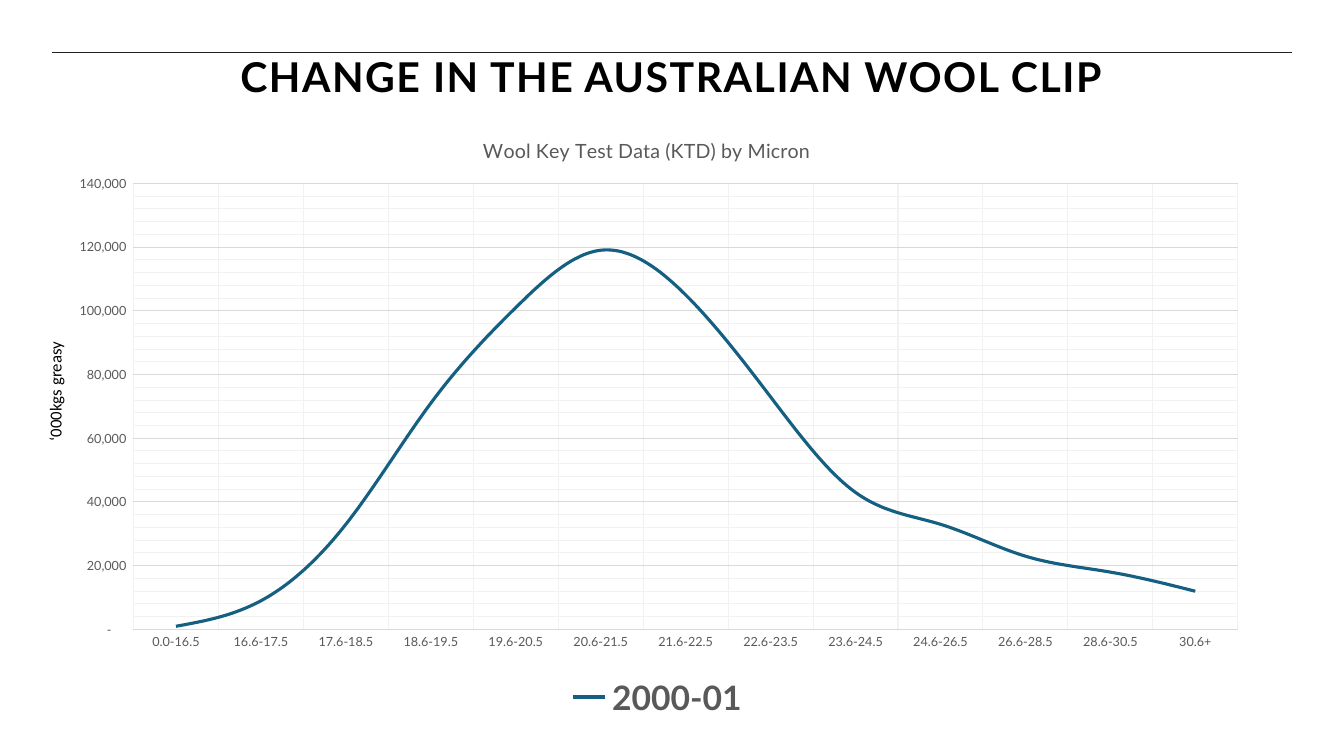
from lxml.etree import SubElement
from pptx import Presentation
from pptx.chart.data import CategoryChartData
from pptx.dml.color import RGBColor
from pptx.enum.chart import XL_CHART_TYPE, XL_LEGEND_POSITION, XL_TICK_MARK
from pptx.enum.shapes import MSO_CONNECTOR
from pptx.enum.text import PP_ALIGN
from pptx.oxml import parse_xml
from pptx.oxml.ns import nsdecls, qn
from pptx.util import Inches, Pt

# Content
TITLE = "CHANGE IN THE AUSTRALIAN WOOL CLIP"
HEAD = "Wool Key Test Data (KTD) by Micron"
UNIT = "‘000kgs greasy"
SERIES = "2000-01"
CLIP = {
    "0.0-16.5": 1000, "16.6-17.5": 9000, "17.6-18.5": 33000,
    "18.6-19.5": 71000, "19.6-20.5": 101000, "20.6-21.5": 119000,
    "21.6-22.5": 105000, "22.6-23.5": 73000, "23.6-24.5": 43000,
    "24.6-26.5": 33000, "26.6-28.5": 23000, "28.6-30.5": 18000,
    "30.6+": 12000,
}
COLORS = {"ink": "000000", "rule": "231F20", "grey": "595959",
          "grid": "D9D9D9", "faint": "F2F2F2", "curve": "156082"}
NUMBER = '_-* #,##0_-;\\-* #,##0_-;_-* "-"??_-;_-@_'

# Places: shares of the slide, and of the chart for its parts
WIDE, HIGH = 13.33, 7.5
EDGE = 0.52 / WIDE
BOXES = {"title": (EDGE, 0.084, 0.921, 0.1),
         "chart": (EDGE, 0.145, 0.9, 0.813),
         "unit": (-0.013, 0.481, 0.108, 0.04)}
PLOT = {"x": 0.067, "y": 0.12, "w": 0.913, "h": 0.726}
HEAD_AT = {"x": 0.353, "y": 0.037}

# Text formats
FONTS = {
    "title": {"name": "Lato", "size": Pt(29.3), "bold": True, "color": "ink"},
    "unit": {"name": "Calibri", "size": Pt(12), "color": "ink"},
    "base": {"name": "Lato", "size": Pt(10), "color": "ink"},
    "head": {"name": "Lato", "size": Pt(14), "bold": False, "color": "grey"},
    "axis": {"name": "Lato", "size": Pt(9), "color": "grey"},
    "legend": {"name": "Lato", "size": Pt(24), "bold": True, "color": "grey"},
}


def place(key):
    x, y, w, h = BOXES[key]
    return [Inches(n) for n in (x * WIDE, y * HIGH, w * WIDE, h * HIGH)]


def style(font, key):
    for name, value in FONTS[key].items():
        if name == "color":
            font.color.rgb = RGBColor.from_string(COLORS[value])
        else:
            setattr(font, name, value)


def stroke(line, color, width):
    line.color.rgb = RGBColor.from_string(COLORS[color])
    line.width = Pt(width)


def layout(node, index, shares, inner=False):
    """Fix a chart part at shares of the chart's size."""
    for old in node.findall(qn("c:layout")):
        node.remove(old)
    part = parse_xml(f'<c:layout {nsdecls("c")}/>')
    node.insert(index, part)
    manual = SubElement(part, qn("c:manualLayout"))
    tags = [("layoutTarget", "inner")] if inner else []
    tags += [("xMode", "edge"), ("yMode", "edge"), *shares.items()]
    for tag, value in tags:
        SubElement(manual, qn("c:" + tag)).set("val", str(value))


def write(key, text):
    box = slide.shapes.add_textbox(*place(key))
    box.text_frame.word_wrap = True
    para = box.text_frame.paragraphs[0]
    run = para.add_run()
    run.text = text
    style(run.font, key)
    return box, para, run


deck = Presentation()
deck.slide_width, deck.slide_height = Inches(WIDE), Inches(HIGH)
slide = deck.slides.add_slide(deck.slide_layouts[6])

# Top rule
top = Inches(0.52)
rule = slide.shapes.add_connector(
    MSO_CONNECTOR.STRAIGHT, top, top, Inches(WIDE) - top, top)
stroke(rule.line, "rule", 0.5)
SubElement(rule._element.spPr, qn("a:effectLst"))

# Title
box, para, run = write("title", TITLE)
frame = box.text_frame
frame.margin_left = frame.margin_right = frame.margin_top = 0
para.alignment = PP_ALIGN.CENTER
para.line_spacing = Pt(26.6)
run.font._element.set("spc", "110")

# Chart
data = CategoryChartData(number_format="#,##0")
data.categories = list(CLIP)
data.add_series(SERIES, list(CLIP.values()))
chart = slide.shapes.add_chart(
    XL_CHART_TYPE.LINE, *place("chart"), data).chart
style(chart.font, "base")
chart.has_title = True
head = chart.chart_title.text_frame
head.text = HEAD
style(head.paragraphs[0].runs[0].font, "head")
layout(chart.chart_title._element, 1, HEAD_AT)
layout(chart._chartSpace.plotArea, 0, PLOT, inner=True)

# Curve
plot = chart.plots[0]
plot.vary_by_categories = False
curve = plot.series[0]
curve.smooth = True
stroke(curve.format.line, "curve", 2.25)

# Axes and grids
cat, val = chart.category_axis, chart.value_axis
for axis, grid in ((cat, "faint"), (val, "grid")):
    axis.major_tick_mark = axis.minor_tick_mark = XL_TICK_MARK.NONE
    style(axis.tick_labels.font, "axis")
    axis.has_major_gridlines = True
    stroke(axis.major_gridlines.format.line, grid, 0.75)
stroke(cat.format.line, "grid", 0.75)
val.format.line.fill.background()
val.minimum_scale, val.maximum_scale = 0, 140000
val.major_unit, val.minor_unit = 20000, 4000
val.tick_labels.number_format = NUMBER
val.tick_labels.number_format_is_linked = False
val.has_minor_gridlines = True
val._element.find(qn("c:minorGridlines")).append(parse_xml(
    f'<c:spPr {nsdecls("c", "a")}><a:ln w="9525"><a:solidFill>'
    f'<a:srgbClr val="{COLORS["faint"]}"/></a:solidFill></a:ln></c:spPr>'))

# Legend
chart.has_legend = True
chart.legend.position = XL_LEGEND_POSITION.BOTTOM
chart.legend.include_in_layout = False
style(chart.legend.font, "legend")

# Unit beside the value axis
box, para, run = write("unit", UNIT)
box.rotation = 270

deck.save("out.pptx")
